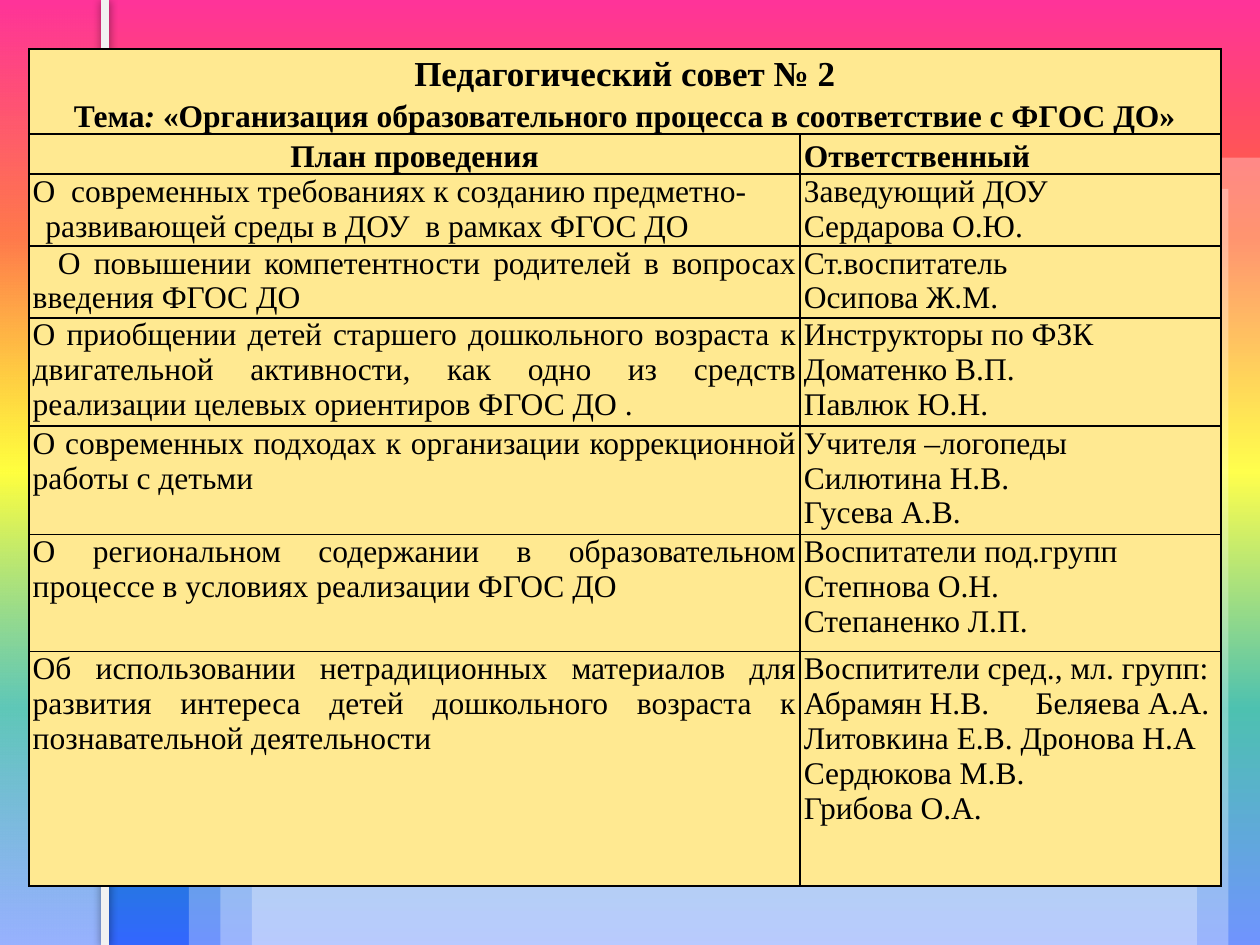
from lxml import etree
from pptx import Presentation
from pptx import util as u
from pptx.dml.color import RGBColor
from pptx.enum import shapes, text
from pptx.oxml import parse_xml
from pptx.oxml.ns import nsdecls, qn

CENTER = text.PP_ALIGN.CENTER
JUSTIFY = text.PP_ALIGN.JUSTIFY
LEFT = text.PP_ALIGN.LEFT


def rgb(color):
    return RGBColor.from_string(color)


class CouncilSlide:
    font = "Times New Roman"
    ink = "000000"
    paper = "FFE991"
    size = 18

    def __init__(self, slide):
        self.slide = slide

    def gradient(self, fill, holder, stops, angle):
        fill.solid()
        fill.fore_color.rgb = rgb("FFFFFF")
        colors = "".join(
            f'<a:gs pos="{place * 1000}"><a:srgbClr val="{color}">'
            f'<a:alpha val="{alpha * 1000}"/></a:srgbClr></a:gs>'
            for place, color, alpha in stops)
        holder.replace(holder.find(qn("a:solidFill")), parse_xml(
            f'<a:gradFill {nsdecls("a")} rotWithShape="1"><a:gsLst>{colors}</a:gsLst>'
            f'<a:lin ang="{angle * 60000}" scaled="0"/></a:gradFill>'))

    def background(self, stops, angle):
        fill = self.slide.background.fill
        fill.solid()
        holder = self.slide.element.find(".//" + qn("p:bgPr"))
        self.gradient(fill, holder, stops, angle)

    def panel(self, left, top, width, height, stops=None, angle=0, alpha=30):
        panel = self.slide.shapes.add_shape(
            shapes.MSO_SHAPE.RECTANGLE, *map(u.Inches, (left, top, width, height)))
        panel.shadow.inherit = False
        panel.line.fill.background()
        if stops:
            self.gradient(panel.fill, panel.element.spPr, stops, angle)
            return
        panel.fill.solid()
        panel.fill.fore_color.rgb = rgb("FFFFFF")
        color = panel.element.spPr.find(".//" + qn("a:srgbClr"))
        etree.SubElement(color, qn("a:alpha"), val=str(alpha * 1000))

    def rail(self, x, top, bottom, color, width):
        rail = self.slide.shapes.add_connector(
            shapes.MSO_CONNECTOR.STRAIGHT, *map(u.Inches, (x, top, x, bottom)))
        rail.line.color.rgb = rgb(color)
        rail.line.width = u.Pt(width)
        rail.element.spPr.append(parse_xml(
            f'<a:effectLst {nsdecls("a")}><a:outerShdw blurRad="63500" dist="0">'
            f'<a:srgbClr val="{self.ink}"><a:alpha val="40000"/></a:srgbClr>'
            '</a:outerShdw></a:effectLst>'))

    def table(self, left, top, columns, heights):
        frame = self.slide.shapes.add_table(
            len(heights), len(columns),
            *map(u.Inches, (left, top, sum(columns), sum(heights))))
        table = frame.table
        table.first_row = table.horz_banding = False
        for column, width in zip(table.columns, columns):
            column.width = u.Inches(width)
        for row, height in zip(table.rows, heights):
            row.height = u.Inches(height)
        for cell in table.iter_cells():
            self.cell_style(cell)
        return table

    def cell_style(self, cell):
        margins = {"margin_left": 0.03, "margin_right": 0.03,
                   "margin_top": 0, "margin_bottom": 0}
        for name, value in margins.items():
            setattr(cell, name, u.Inches(value))
        cell.fill.solid()
        cell.fill.fore_color.rgb = rgb(self.paper)
        properties = cell._tc.get_or_add_tcPr()
        for place, side in enumerate("LRTB"):
            properties.insert(place, parse_xml(
                f'<a:ln{side} {nsdecls("a")} w="12700"><a:solidFill>'
                f'<a:srgbClr val="{self.ink}"/></a:solidFill></a:ln{side}>'))

    def cell_text(self, cell, paragraphs, bold=False, indent=0, hanging=0, tab=0, **layout):
        frame = cell.text_frame
        for number, runs in enumerate(paragraphs):
            paragraph = frame.add_paragraph() if number else frame.paragraphs[0]
            for name, value in layout.items():
                setattr(paragraph, name, value)
            properties = paragraph._p.get_or_add_pPr()
            if indent or hanging:
                properties.set("marL", str(u.Inches(hanging)))
                properties.set("indent", str(u.Inches(indent - hanging)))
            if tab:
                stops = etree.SubElement(properties, qn("a:tabLst"))
                etree.SubElement(stops, qn("a:tab"), pos=str(u.Inches(tab)), algn="l")
            for words, changes in [(runs, {})] if isinstance(runs, str) else runs:
                run = paragraph.add_run()
                run.text = words
                style = {"name": self.font, "size": u.Pt(self.size), "bold": bold, **changes}
                for name, value in style.items():
                    setattr(run.font, name, value)
                run.font.color.rgb = rgb(self.ink)


TITLE = [
    [("Педагогический совет № 2", {"size": u.Pt(20)})],
    [("Тема", {}), (": ", {"italic": True}),
     ("«Организация образовательного процесса в соответствие с ФГОС ДО»", {})],
]
AGENDA = [
    ("О  современных требованиях к созданию предметно-развивающей среды в ДОУ  в рамках ФГОС ДО",
     {"alignment": LEFT, "hanging": 0.1, "space_after": u.Pt(10)},
     ["Заведующий ДОУ", "Сердарова О.Ю."]),
    ("О повышении компетентности родителей в вопросах введения ФГОС ДО",
     {"indent": 0.2},
     ["Ст.воспитатель", "Осипова Ж.М."]),
    ("О приобщении детей старшего дошкольного возраста к двигательной активности, "
     "как одно из средств реализации целевых ориентиров ФГОС ДО .", {},
     ["Инструкторы по ФЗК", "Доматенко В.П.", "Павлюк Ю.Н."]),
    ("О современных подходах к организации коррекционной работы с детьми", {},
     ["Учителя –логопеды", "Силютина Н.В.", "Гусева А.В."]),
    ("О региональном содержании в образовательном процессе в условиях реализации ФГОС ДО", {},
     ["Воспитатели под.групп", "Степнова О.Н.", "Степаненко Л.П."]),
    ("Об использовании нетрадиционных материалов для развития интереса детей "
     "дошкольного возраста к познавательной деятельности", {},
     ["Воспитители сред., мл. групп:", "Абрамян Н.В.\tБеляева А.А.",
      "Литовкина Е.В. Дронова Н.А", "Сердюкова М.В.", "Грибова О.А."]),
]


def main():
    deck = Presentation()
    deck.slide_width, deck.slide_height = u.Inches(10), u.Inches(7.5)
    council = CouncilSlide(deck.slides.add_slide(deck.slide_layouts[6]))

    rainbow = ["FF3399", "FF6633", "FFFF00", "01A78F", "3366FF"]
    council.background([(25 * i, color, 100) for i, color in enumerate(rainbow)], 90)
    for step, width in enumerate((8.5, 8, 7.5)):
        top = 1.25 + 0.25 * step
        council.panel(1.5 + 0.25 * step, top, width, 7.5 - top)
    council.panel(0, 0, 0.85, 7.5, [(0, "FFFFFF", 50), (100, "FFFFFF", 0)], 270)
    council.rail(0.83, 0, 7.5, "F1F1F1", 4.5)

    plan = council.table(0.23, 0.39, [6.12, 3.34],
                         [0.67, 0.32, 0.57, 0.57, 0.86, 0.86, 0.93, 1.86])
    plan.cell(0, 0).merge(plan.cell(0, 1))
    heading = {"bold": True, "line_spacing": 1.15}
    council.cell_text(plan.cell(0, 0), TITLE, alignment=CENTER, **heading)
    council.cell_text(plan.cell(1, 0), ["План проведения"], alignment=CENTER, **heading)
    council.cell_text(plan.cell(1, 1), ["Ответственный"], **heading)
    for row, (topic, layout, people) in enumerate(AGENDA, 2):
        council.cell_text(plan.cell(row, 0), [topic], **{"alignment": JUSTIFY, **layout})
        council.cell_text(plan.cell(row, 1), people, tab=1.84)

    deck.save("out.pptx")


if __name__ == "__main__":
    main()
